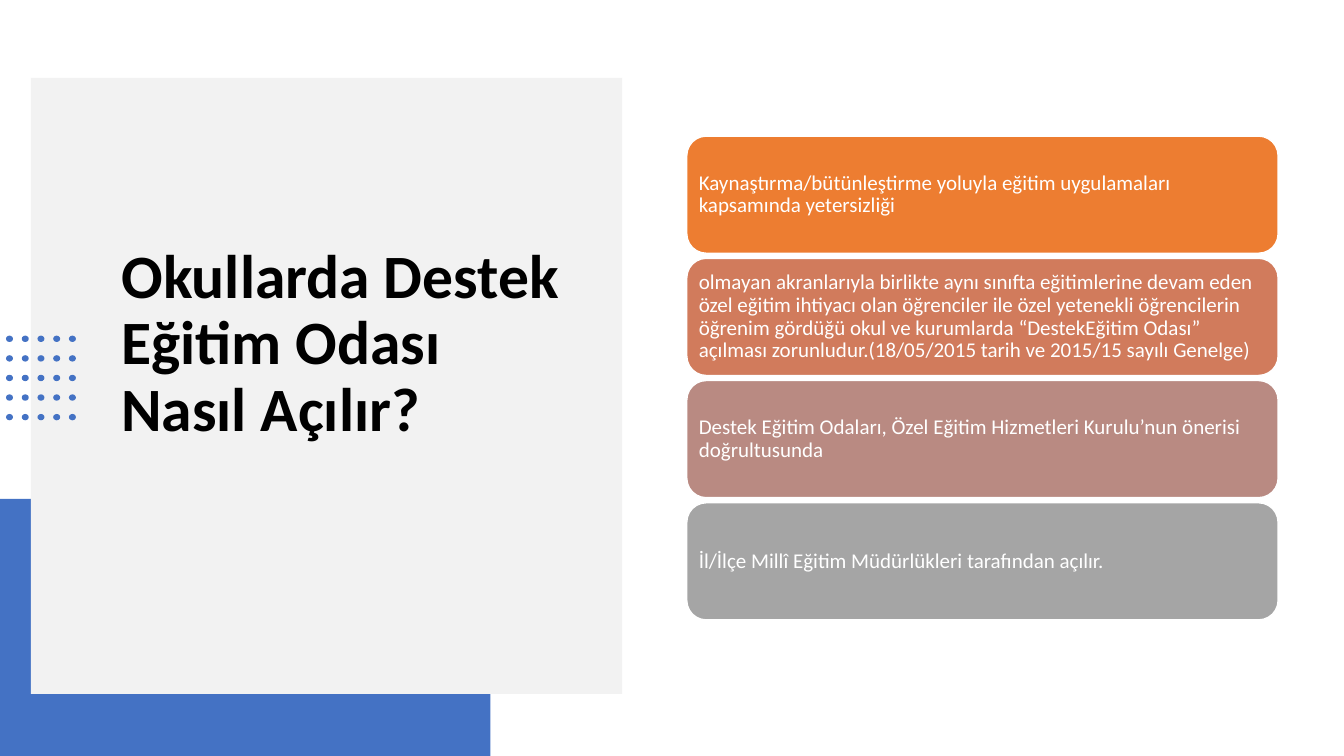
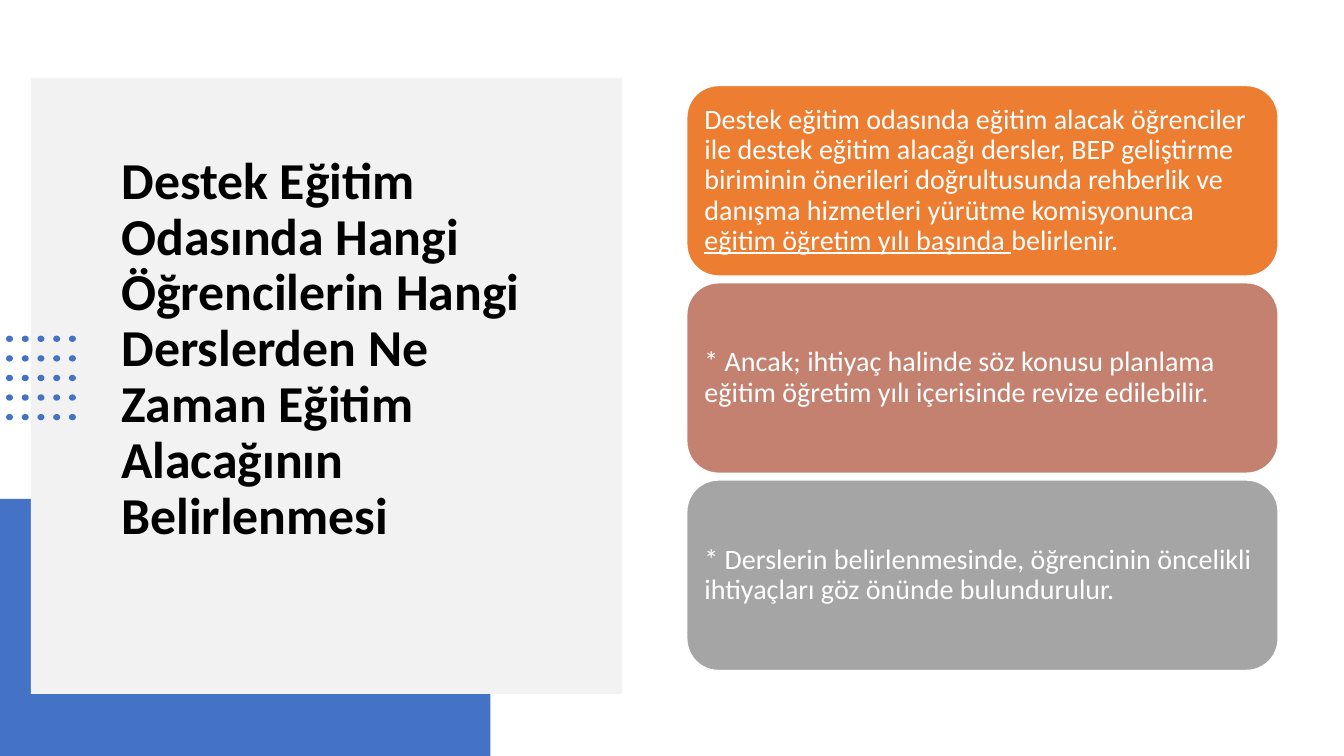
from collections import namedtuple
from itertools import product
from pptx import Presentation
from pptx.dml.color import RGBColor
from pptx.enum.shapes import MSO_SHAPE
from pptx.enum.text import MSO_ANCHOR, MSO_AUTO_SIZE, PP_ALIGN
from pptx.util import Inches, Pt

Box = namedtuple("Box", "x y w h")

BLUE = RGBColor(0x44, 0x72, 0xC4)
PALE = RGBColor(0xF2, 0xF2, 0xF2)
BLACK = RGBColor(0x00, 0x00, 0x00)
WHITE = RGBColor(0xFF, 0xFF, 0xFF)
ORANGE = RGBColor(0xED, 0x7D, 0x31)
TERRACOTTA = RGBColor(0xD1, 0x7B, 0x5C)
CLAY = RGBColor(0xC4, 0x81, 0x70)
ROSE = RGBColor(0xB9, 0x8A, 0x82)
GREY = RGBColor(0xA5, 0xA5, 0xA5)

FONT = "Calibri"
LINE_SPACING = 0.9
SLIDE = Box(0, 0, Inches(13.33), Inches(7.5))

SLIDES = [
    {
        "title": "Okullarda Destek Eğitim Odası Nasıl Açılır?",
        "title_size": 44,
        "text_size": 15,
        "card_share": 15.5,
        "cards": [
            (ORANGE, ["Kaynaştırma/bütünleştirme yoluyla eğitim uygulamaları "
                      "kapsamında yetersizliği"]),
            (TERRACOTTA, ["olmayan akranlarıyla birlikte aynı sınıfta eğitimlerine devam eden "
                          "özel eğitim ihtiyacı olan öğrenciler ile özel yetenekli öğrencilerin "
                          "öğrenim gördüğü okul ve kurumlarda “DestekEğitim Odası” açılması "
                          "zorunludur.(18/05/2015 tarih ve 2015/15 sayılı Genelge)"]),
            (ROSE, ["Destek Eğitim Odaları, Özel Eğitim Hizmetleri Kurulu’nun önerisi "
                    "doğrultusunda"]),
            (GREY, ["İl/İlçe Millî Eğitim Müdürlükleri tarafından açılır."]),
        ],
    },
    {
        "title": "Destek Eğitim Odasında Hangi Öğrencilerin Hangi Derslerden Ne Zaman "
                 "Eğitim Alacağının Belirlenmesi",
        "title_size": 37,
        "text_size": 20,
        "card_share": 25.2,
        "cards": [
            (ORANGE, ["Destek eğitim odasında eğitim alacak öğrenciler ile destek eğitim "
                      "alacağı dersler, BEP geliştirme biriminin önerileri doğrultusunda "
                      "rehberlik ve danışma hizmetleri yürütme komisyonunca ",
                      "eğitim öğretim yılı başında ",
                      "belirlenir."]),
            (CLAY, ["* Ancak; ihtiyaç halinde söz konusu planlama eğitim öğretim yılı "
                    "içerisinde revize edilebilir."]),
            (GREY, ["* Derslerin belirlenmesinde, öğrencinin öncelikli ihtiyaçları göz "
                    "önünde bulundurulur."]),
        ],
    },
]


def within(box, x, y, w, h):
    return Box(int(box.x + box.w * x / 100), int(box.y + box.h * y / 100),
               int(box.w * w / 100), int(box.h * h / 100))


def apply(target, **values):
    for name, value in values.items():
        setattr(target, name, value)


def add_shape(shapes, kind, box, color, outline=None):
    sp = shapes.add_shape(kind, *box)
    sp.shadow.inherit = False
    sp.fill.solid()
    sp.fill.fore_color.rgb = color
    if outline is None:
        sp.line.fill.background()
    else:
        sp.line.color.rgb = outline
        sp.line.width = Pt(1)
    return sp


def write(tf, parts, size, color, bold=False):
    apply(tf, word_wrap=True, auto_size=MSO_AUTO_SIZE.NONE,
          vertical_anchor=MSO_ANCHOR.MIDDLE)
    p = tf.paragraphs[0]
    apply(p, alignment=PP_ALIGN.LEFT, line_spacing=LINE_SPACING)
    for i, text in enumerate(parts):
        r = p.add_run()
        r.text = text
        apply(r.font, name=FONT, size=Pt(size), bold=bold, underline=i % 2 == 1)
        r.font.color.rgb = color


def add_dots(s, box, count=5):
    group = s.shapes.add_group_shape()
    for col, row in product(range(count), repeat=2):
        dot = within(box, col * 90 / (count - 1), row * 92.5 / (count - 1), 10, 7.5)
        add_shape(group.shapes, MSO_SHAPE.OVAL, dot, BLUE)


def add_title_panel(s, box, text, size):
    add_shape(s.shapes, MSO_SHAPE.RECTANGLE, box, PALE)
    title = s.shapes.title
    title.element.getparent().append(title.element)
    place = within(box, 13.6, 11.5, 78.2, 74.6)
    apply(title, left=place.x, top=place.y, width=place.w, height=place.h)
    write(title.text_frame, [text], size, BLACK, bold=True)
    title.text_frame.margin_bottom = Inches(0.05) + Pt(size * 1.1)


def add_cards(s, box, cards, share, size):
    height = box.h * share / 100
    pitch = height + Pt(size * 0.24)
    top = box.y + (box.h - pitch * (len(cards) - 1) - height) / 2
    inset = Pt(size * 0.3)
    for i, (color, parts) in enumerate(cards):
        place = Box(box.x, int(top + i * pitch), box.w, int(height))
        sp = add_shape(s.shapes, MSO_SHAPE.ROUNDED_RECTANGLE, place, color, WHITE)
        tf = sp.text_frame
        apply(tf, margin_left=inset, margin_right=inset,
              margin_top=inset, margin_bottom=inset)
        write(tf, parts, size, WHITE)


def add_panel_slide(prs, content):
    s = prs.slides.add_slide(prs.slide_layouts[5])
    add_shape(s.shapes, MSO_SHAPE.RECTANGLE, within(SLIDE, 0, 66, 36.5, 34), BLUE)
    add_title_panel(s, within(SLIDE, 2.3, 10.3, 44, 81.5),
                    content["title"], content["title_size"])
    add_dots(s, within(SLIDE, 0.45, 44.4, 5.2, 11.2))
    add_cards(s, within(SLIDE, 51.1, 0, 44, 100), content["cards"],
              content["card_share"], content["text_size"])


def main():
    prs = Presentation()
    apply(prs, slide_width=SLIDE.w, slide_height=SLIDE.h)
    for content in SLIDES:
        add_panel_slide(prs, content)
    prs.save("out.pptx")


if __name__ == "__main__":
    main()
